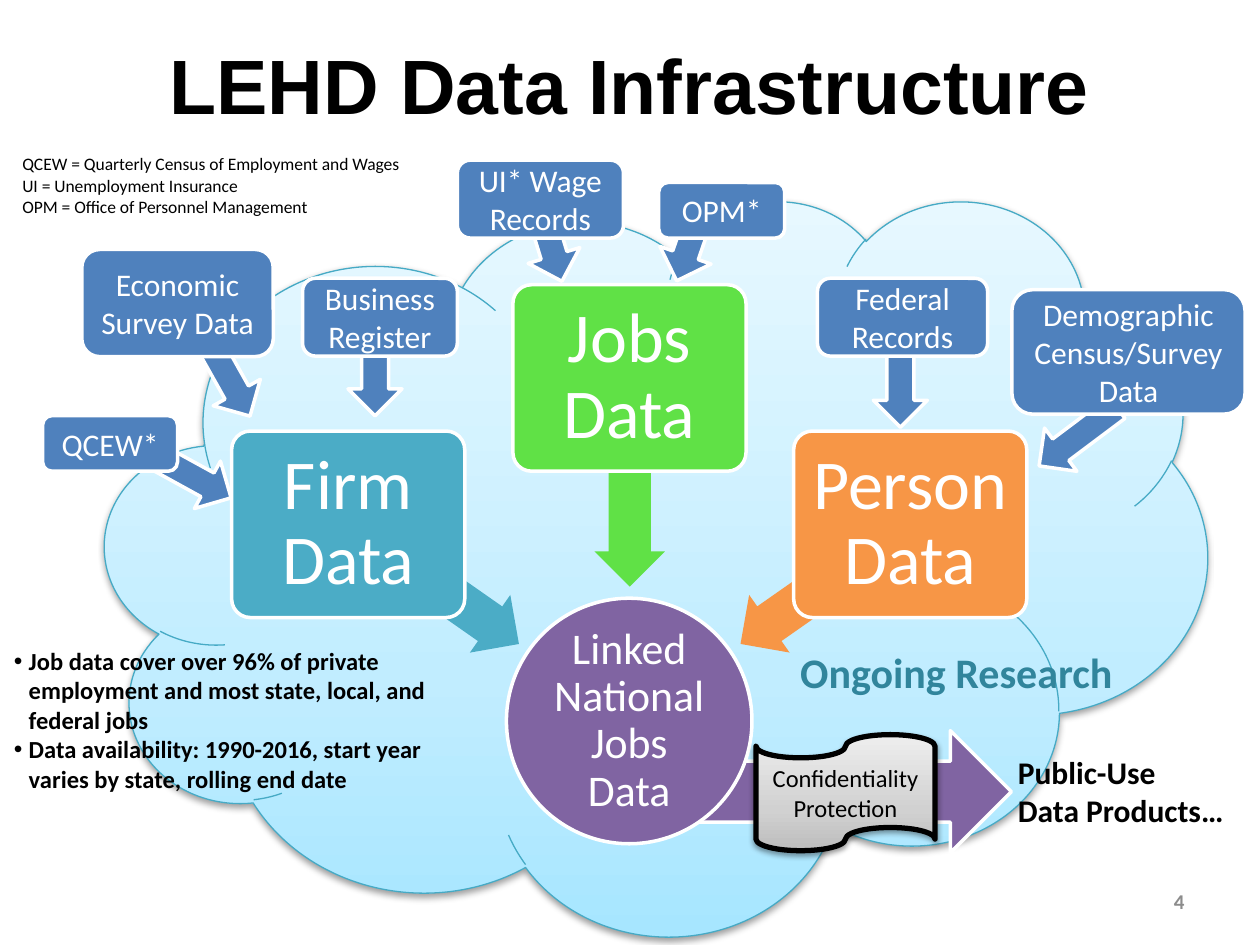
from lxml import etree
from pptx import Presentation
from pptx import util as u
from pptx.dml.color import RGBColor
from pptx.enum import shapes, text
from pptx.oxml import ns

BLACK = RGBColor(0x00, 0x00, 0x00)
WHITE = RGBColor(0xFF, 0xFF, 0xFF)
GREY = RGBColor(0x8C, 0x8C, 0x8C)
BLUE = RGBColor(0x4F, 0x81, 0xBD)
PURPLE = RGBColor(0x80, 0x64, 0xA2)
TEAL = RGBColor(0x4B, 0xAC, 0xC6)
DARK_TEAL = RGBColor(0x31, 0x85, 0x9C)
GREEN = RGBColor(0x60, 0xE1, 0x46)
ORANGE = RGBColor(0xF7, 0x96, 0x46)
CLOUD_EDGE = RGBColor(0x46, 0xAA, 0xC5)
SKY = [(0, RGBColor(0xA7, 0xE6, 0xFF)), (35, RGBColor(0xC1, 0xED, 0xFF)),
       (100, RGBColor(0xE7, 0xF8, 0xFF))]
SILVER = [(0, RGBColor(0xBD, 0xBD, 0xBD)), (35, RGBColor(0xD1, 0xD1, 0xD1)),
          (100, RGBColor(0xEE, 0xEE, 0xEE))]

KIND = shapes.MSO_SHAPE
ALIGN = text.PP_ALIGN
ANCHOR = text.MSO_ANCHOR


def add_child(parent, tag, **attributes):
    return etree.SubElement(parent, ns.qn(tag), **attributes)


def write_text(frame, words, size=18, color=BLACK, bold=False, font="Calibri",
               align=ALIGN.LEFT, anchor=ANCHOR.TOP, wrap=True, inset=None,
               spacing=None, bullet=None):
    frame.text = words
    frame.word_wrap = wrap
    frame.vertical_anchor = anchor
    if inset is not None:
        frame.margin_left = frame.margin_right = u.Cm(inset)
        frame.margin_top = frame.margin_bottom = u.Cm(inset)
    for para in frame.paragraphs:
        if bullet:
            properties = para._p.get_or_add_pPr()
            properties.set("marL", str(u.Cm(0.3)))
            properties.set("indent", str(-u.Cm(0.3)))
            add_child(properties, "a:buFont", typeface="Arial")
            add_child(properties, "a:buChar", char=bullet)
        para.alignment = align
        if spacing:
            para.line_spacing = spacing
        for span in para.runs:
            span.font.name = font
            span.font.size = u.Pt(size)
            span.font.bold = bold
            span.font.color.rgb = color


class Diagram:
    def __init__(self, deck):
        self.page = deck.slides.add_slide(deck.slide_layouts[5])
        self.line_width = 2

    def title(self, words, *place):
        box = self.page.shapes.title
        box.left, box.top, box.width, box.height = map(u.Cm, place)
        write_text(box.text_frame, words, size=44, bold=True, font="Arial",
                   align=ALIGN.CENTER, anchor=ANCHOR.MIDDLE)

    def label(self, words, *place, grow=True, **style):
        box = self.page.shapes.add_textbox(*map(u.Cm, place))
        write_text(box.text_frame, words, **style)
        if grow:
            box.text_frame.auto_size = text.MSO_AUTO_SIZE.SHAPE_TO_FIT_TEXT

    def shape(self, kind, *place, fill=None, line=WHITE, width=None,
              turn=0, adjust=(), words=None, **style):
        box = self.page.shapes.add_shape(kind, *map(u.Cm, place))
        box.shadow.inherit = False
        box.rotation = turn
        for index, value in enumerate(adjust):
            box.adjustments[index] = value
        if fill:
            box.fill.solid()
            box.fill.fore_color.rgb = fill
        if line is None:
            box.line.fill.background()
        else:
            box.line.color.rgb = line
            box.line.width = u.Pt(width or self.line_width)
        if words:
            look = dict(color=WHITE, align=ALIGN.CENTER, anchor=ANCHOR.MIDDLE)
            write_text(box.text_frame, words, **{**look, **style})
        return box

    def shaded(self, kind, *place, stops, **style):
        box = self.shape(kind, *place, **style)
        box.fill.gradient()
        box.fill.gradient_angle = 90
        stop_list = box._element.spPr.find(".//" + ns.qn("a:gsLst"))
        for stop in list(stop_list):
            stop_list.remove(stop)
        for percent, color in stops:
            stop = add_child(stop_list, "a:gs", pos=str(percent * 1000))
            add_child(stop, "a:srgbClr", val=str(color))
        effects = box._element.spPr.find(ns.qn("a:effectLst"))
        shadow = add_child(effects, "a:outerShdw", blurRad="40000", dist="20000",
                           dir="5400000", rotWithShape="0")
        shade = add_child(shadow, "a:srgbClr", val=str(BLACK))
        add_child(shade, "a:alpha", val="38000")

    def source(self, words, place, arrow_corner, turn):
        self.shape(KIND.RIGHT_ARROW, *arrow_corner, 1.96, 1.09, fill=BLUE, turn=turn)
        self.shape(KIND.ROUNDED_RECTANGLE, *place, fill=BLUE, words=words)

    def dataset(self, words, corner, color, arrow_corner, turn):
        self.shape(KIND.LEFT_ARROW, *arrow_corner, 4.19, 1.42, fill=color,
                   line=None, turn=turn, adjust=(0.6, 0.5))
        self.shape(KIND.ROUNDED_RECTANGLE, *corner, 4.7, 3.76, fill=color,
                   adjust=(0.1,), words=words, size=40, inset=0.2, spacing=0.9)


SOURCES = [
    ("QCEW*", (0.86, 8.38, 2.72, 1.12), (2.82, 9.02), 28.8),
    ("Economic Survey Data", (1.65, 5.03, 3.86, 2.16), (3.58, 6.99), 60.7),
    ("Business Register", (6.1, 5.61, 3.12, 1.57), (6.58, 6.86), 90),
    ("UI* Wage Records", (9.22, 3.23, 3.35, 1.57), (10.06, 4.19), 73),
    ("Federal Records", (16.48, 5.61, 3.43, 1.57), (17.17, 7.09), 90),
    ("Demographic Census/Survey Data", (20.4, 5.84, 4.7, 2.51), (20.75, 8.26), 143.1),
    ("OPM*", (13.28, 3.68, 2.54, 1.12), (12.98, 4.19), 109),
]
DATASETS = [
    ("Firm Data", (4.67, 8.69), TEAL, (6.65, 11.07), 215),
    ("Jobs Data", (10.34, 5.74), GREEN, (10.6, 9.02), 270),
    ("Person Data", (16, 8.69), ORANGE, (14.55, 11.07), 325),
]
ABBREVIATIONS = """QCEW = Quarterly Census of Employment and Wages
UI = Unemployment Insurance
OPM = Office of Personnel Management"""
COVERAGE = (
    "Job data cover over 96% of private employment and most state, local, and federal jobs\n"
    "Data availability: 1990-2016, start year varies by state, rolling end date"
)


def main():
    deck = Presentation()
    deck.slide_width, deck.slide_height = u.Cm(25.4), u.Cm(19.05)
    diagram = Diagram(deck)
    diagram.title("LEHD Data Infrastructure", 1.27, 0.1, 22.86, 3.18)
    diagram.shaded(KIND.CLOUD, 2.12, 4.02, 22.22, 14.82, stops=SKY,
                   line=CLOUD_EDGE, width=0.75)
    diagram.shape(KIND.RIGHT_ARROW, 12.52, 14.73, 7.87, 2.46, fill=PURPLE)
    for source in SOURCES:
        diagram.source(*source)
    diagram.label("Public-Use\vData Products…", 20.27, 15.06, 4.83, 1.8, bold=True)
    diagram.label(ABBREVIATIONS, 0.2, 2.97, 8.23, 1.55, size=10, wrap=False)
    diagram.shape(KIND.OVAL, 10.21, 12.06, 4.95, 4.95, fill=PURPLE,
                  words="Linked National Jobs Data", size=25, inset=0.05, spacing=0.9)
    for dataset in DATASETS:
        diagram.dataset(*dataset)
    diagram.label(COVERAGE, 0.03, 12.9, 9.53, 3.25, size=14, bold=True, bullet="•")
    diagram.label("4", 18.21, 17.65, 5.92, 1.02, grow=False, size=12, color=GREY,
                  bold=True, align=ALIGN.RIGHT, anchor=ANCHOR.MIDDLE)
    diagram.shaded(KIND.FLOWCHART_PUNCHED_TAPE, 15.24, 14.81, 3.61, 2.34, stops=SILVER,
                   line=BLACK, width=3, words="Confidentiality Protection",
                   size=14, color=BLACK)
    diagram.label("Ongoing Research", 15.88, 12.9, 6.88, 1.27, size=24,
                  color=DARK_TEAL, bold=True, wrap=False)
    deck.save("out.pptx")


if __name__ == "__main__":
    main()
